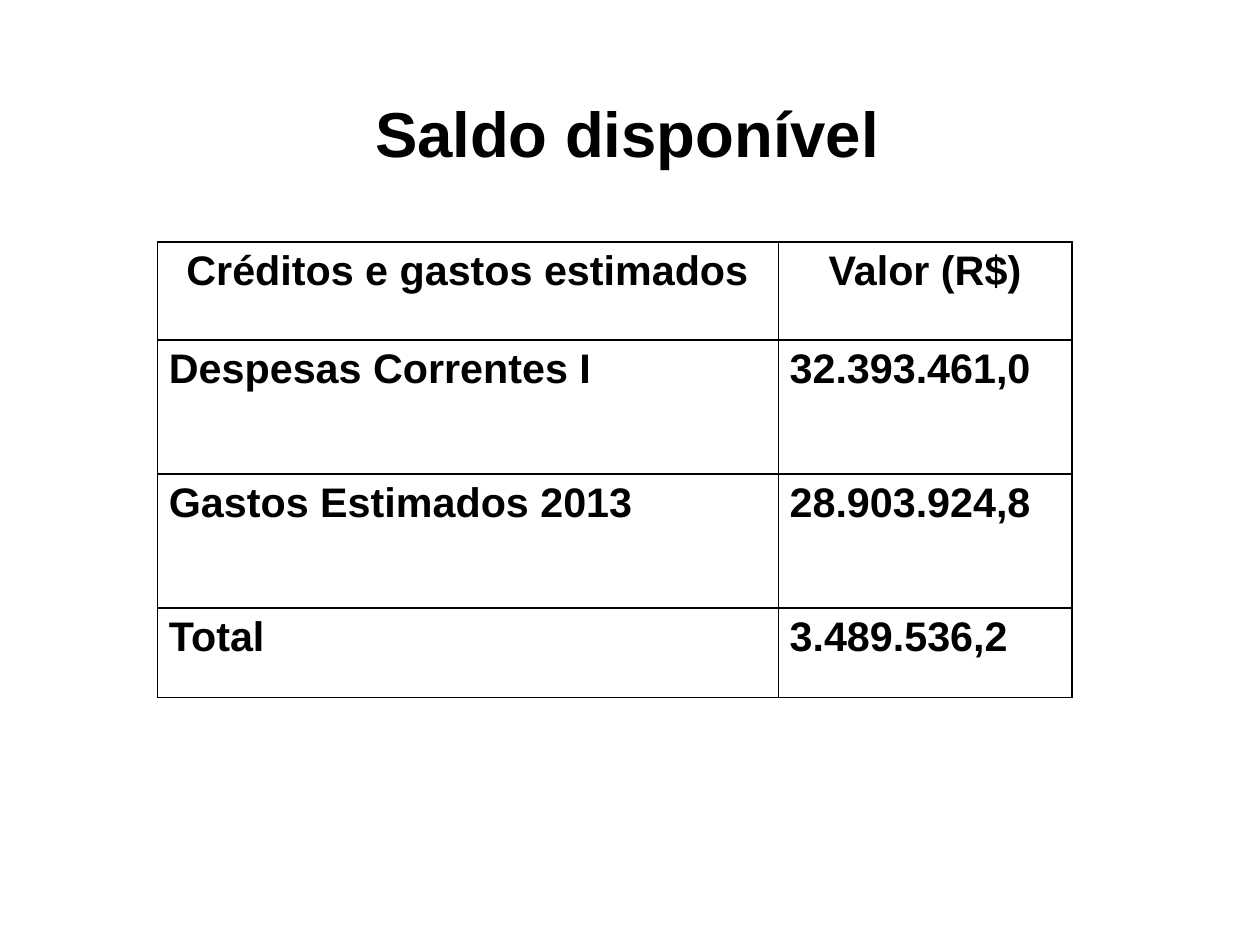
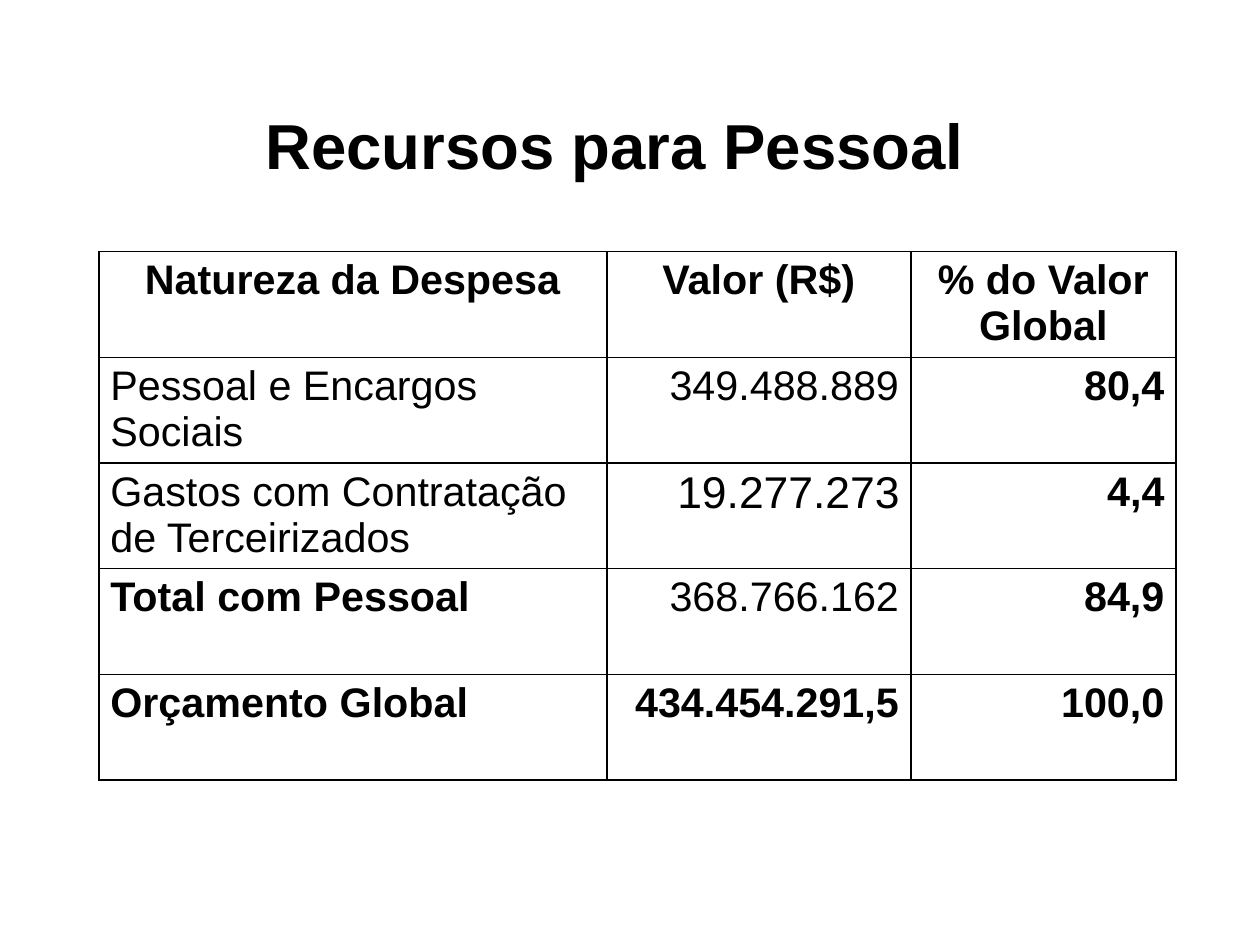
from dataclasses import dataclass

from lxml.etree import SubElement
from pptx import Presentation
from pptx.dml.color import RGBColor
from pptx.enum.text import MSO_ANCHOR, MSO_AUTO_SIZE, PP_ALIGN
from pptx.oxml.ns import qn
from pptx.presentation import Presentation as Deck
from pptx.slide import Slide
from pptx.table import _Cell
from pptx.text.text import _Paragraph
from pptx.util import Pt

MM = 72 / 25.4
WIDE, HIGH = 280 * MM, 210 * MM
FONT = "Arial"
INK = "000000"
PAPER = "FFFFFF"
TITLE_SIZE = 40
CELL_SIZE = 26
RULE = 1


@dataclass
class Entry:
    text: str
    bold: bool = True
    size: float = CELL_SIZE


@dataclass
class Page:
    title: str
    box: tuple[float, float, float, float]
    left: float
    top: float
    cols: list[float]
    rows: list[float]
    aligns: list[PP_ALIGN]
    cells: list[list[Entry]]


PAGES = [
    Page(
        "Saldo disponível", (38, 33.5, 714, 99), 99.2, 152.5,
        [391, 185], [61.7, 84.4, 84.4, 56.5],
        [PP_ALIGN.LEFT, PP_ALIGN.LEFT],
        [
            [Entry("Créditos e gastos estimados"), Entry("Valor (R$)")],
            [Entry("Despesas Correntes I"), Entry("32.393.461,0")],
            [Entry("Gastos Estimados 2013"), Entry("28.903.924,8")],
            [Entry("Total"), Entry("3.489.536,2")],
        ],
    ),
    Page(
        "Recursos para Pessoal", (54.5, 50.5, 665, 80), 62.3, 158.5,
        [320, 191.5, 167], [66.6] * 5,
        [PP_ALIGN.LEFT, PP_ALIGN.RIGHT, PP_ALIGN.RIGHT],
        [
            [Entry("Natureza da Despesa"), Entry("Valor (R$)"),
             Entry("% do Valor Global")],
            [Entry("Pessoal e Encargos Sociais", False),
             Entry("349.488.889", False), Entry("80,4")],
            [Entry("Gastos com Contratação de Terceirizados", False),
             Entry("19.277.273", False, 28), Entry("4,4")],
            [Entry("Total com Pessoal"), Entry("368.766.162", False),
             Entry("84,9")],
            [Entry("Orçamento Global"), Entry("434.454.291,5"),
             Entry("100,0")],
        ],
    ),
]


def color(code: str) -> RGBColor:
    return RGBColor.from_string(code)


def write(para: _Paragraph, entry: Entry, align: PP_ALIGN) -> None:
    para.alignment = align
    run = para.add_run()
    run.text = entry.text
    font = run.font
    font.name = FONT
    font.size = Pt(entry.size)
    font.bold = entry.bold
    font.color.rgb = color(INK)


def border(cell: _Cell) -> None:
    """Rule all four sides; call before the fill, which must come later."""
    props = cell._tc.get_or_add_tcPr()
    for side in "LRTB":
        line = SubElement(props, qn(f"a:ln{side}"), w=str(Pt(RULE)))
        fill = SubElement(line, qn("a:solidFill"))
        SubElement(fill, qn("a:srgbClr"), val=INK)


def add_title(slide: Slide, page: Page) -> None:
    title = slide.shapes.title
    title.left, title.top, title.width, title.height = map(Pt, page.box)
    frame = title.text_frame
    frame.auto_size = MSO_AUTO_SIZE.NONE
    frame.word_wrap = True
    frame.vertical_anchor = MSO_ANCHOR.MIDDLE
    frame.margin_left = frame.margin_right = Pt(0)
    frame.margin_top = frame.margin_bottom = Pt(0)
    write(frame.paragraphs[0], Entry(page.title, size=TITLE_SIZE),
          PP_ALIGN.CENTER)


def add_grid(slide: Slide, page: Page) -> None:
    table = slide.shapes.add_table(
        len(page.rows), len(page.cols), Pt(page.left), Pt(page.top),
        Pt(sum(page.cols)), Pt(sum(page.rows))).table
    table.first_row = table.horz_banding = False
    for col, width in zip(table.columns, page.cols):
        col.width = Pt(width)
    for row, height in zip(table.rows, page.rows):
        row.height = Pt(height)
    for r, line in enumerate(page.cells):
        for c, entry in enumerate(line):
            cell = table.cell(r, c)
            border(cell)
            cell.fill.solid()
            cell.fill.fore_color.rgb = color(PAPER)
            align = page.aligns[c] if r else PP_ALIGN.CENTER
            write(cell.text_frame.paragraphs[0], entry, align)


def add_page(deck: Deck, page: Page) -> None:
    slide = deck.slides.add_slide(deck.slide_layouts[5])
    add_title(slide, page)
    add_grid(slide, page)


def main() -> None:
    deck = Presentation()
    deck.slide_width, deck.slide_height = Pt(WIDE), Pt(HIGH)
    for page in PAGES:
        add_page(deck, page)
    deck.save("out.pptx")


if __name__ == "__main__":
    main()
